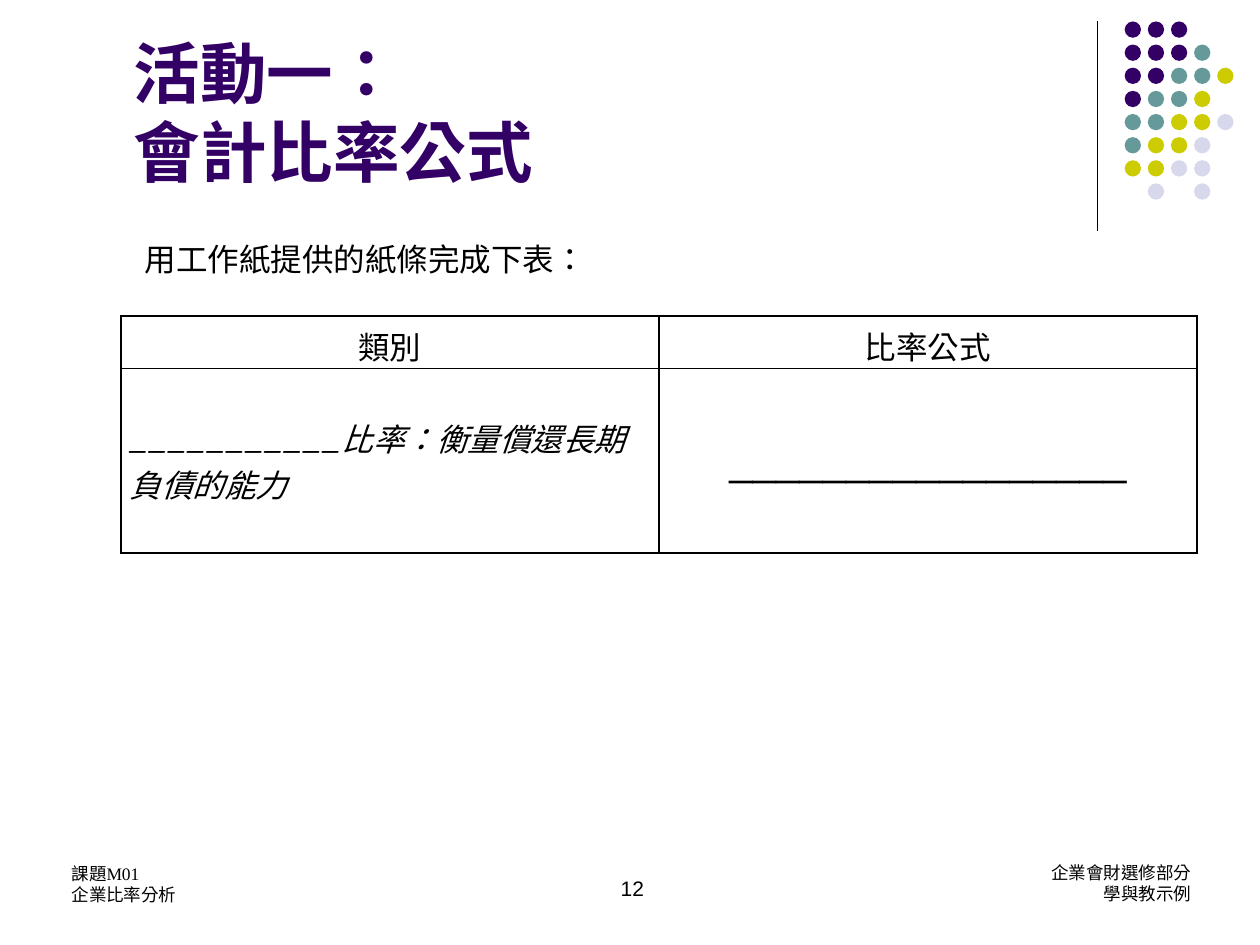
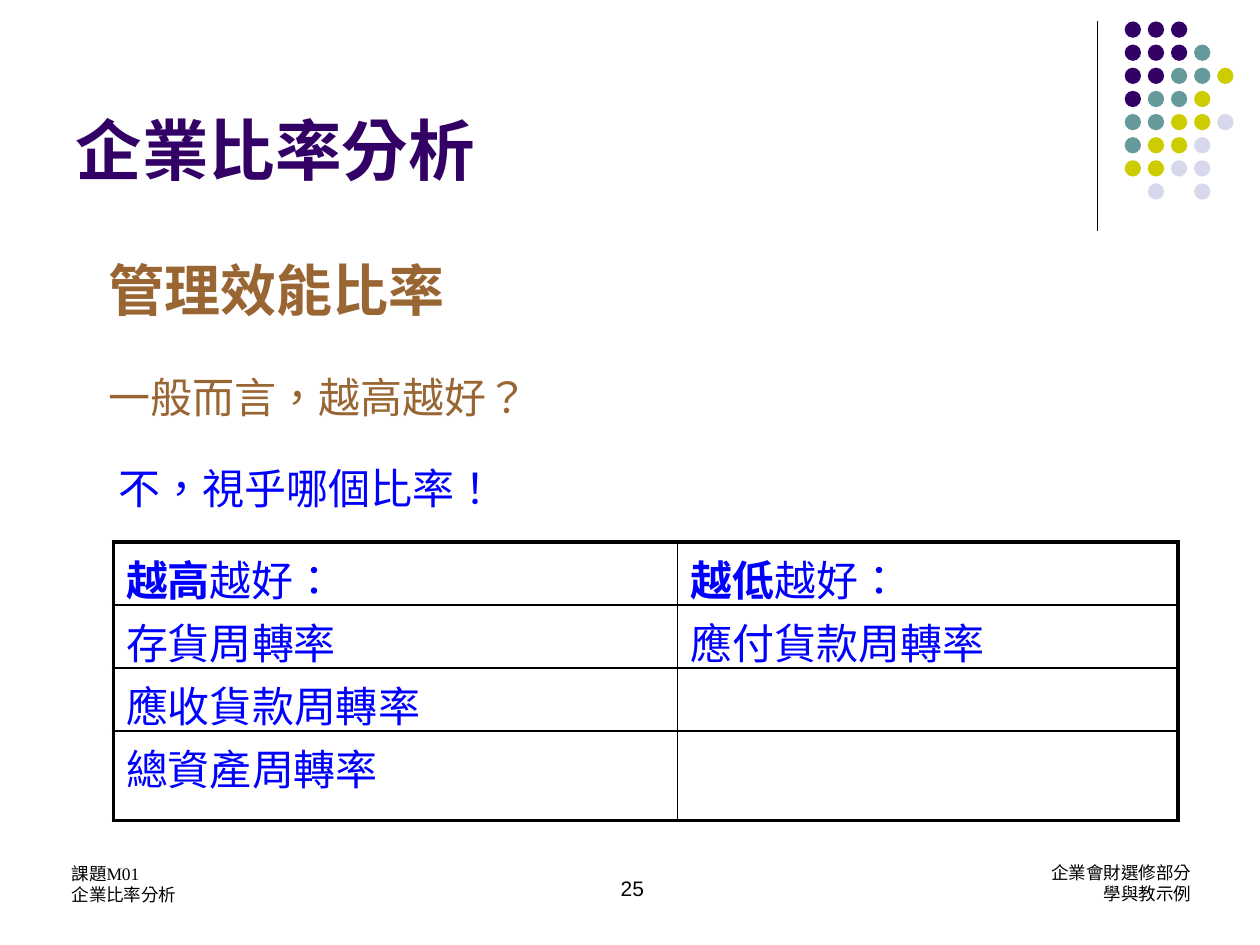
from lxml import etree
from pptx import Presentation
from pptx.dml.color import RGBColor
from pptx.enum.lang import MSO_LANGUAGE_ID
from pptx.enum.shapes import MSO_CONNECTOR, MSO_SHAPE
from pptx.enum.text import MSO_ANCHOR, PP_ALIGN
from pptx.oxml.ns import qn
from pptx.util import Inches, Pt

LEFT, MID, RIGHT, EVEN = PP_ALIGN.LEFT, PP_ALIGN.CENTER, PP_ALIGN.RIGHT, PP_ALIGN.JUSTIFY
TOP, HALF, BASE = MSO_ANCHOR.TOP, MSO_ANCHOR.MIDDLE, MSO_ANCHOR.BOTTOM
OVAL, LINE = MSO_SHAPE.OVAL, MSO_CONNECTOR.STRAIGHT
LANG = MSO_LANGUAGE_ID.TRADITIONAL_CHINESE

WIDE, HIGH = Inches(10), Inches(7.5)
COL, ROW = WIDE / 100, HIGH / 75

BLACK, PURPLE, BROWN, BLUE = "000000", "330066", "996633", "0000FF"
SANS, COMIC, SERIF = "Arial", "Comic Neue", "Times New Roman"
TINTS = {"P": PURPLE, "T": "669999", "Y": "CCCC00", "L": "D8D8EC"}
DOTS = ["PPP", "PPPT", "PPTTY", "PTTY", "TTYYL", "TYYL", "YYLL", " L L"]
THIN, THICK = 1, 2.25


def tint(code):
    return RGBColor.from_string(code)


def place(box):
    x, y, w, h = box
    return round(x * COL), round(y * ROW), round(w * COL), round(h * ROW)


def add_run(par, text, face, size, hue=BLACK, bold=False, slant=False):
    run = par.add_run()
    run.text = text
    font = run.font
    font.name, font.size, font.bold, font.italic = face, Pt(size), bold, slant
    font.color.rgb = tint(hue)
    font.language_id = LANG


def write(frame, lines, align=LEFT, anchor=TOP, gap=0):
    frame.word_wrap = True
    frame.vertical_anchor = anchor
    for i, runs in enumerate(lines):
        par = frame.add_paragraph() if i else frame.paragraphs[0]
        par.alignment = align
        par.space_before = Pt(gap if i else 0)
        for run in runs:
            add_run(par, *run)


def add_text(slide, box, lines, **style):
    frame = slide.shapes.add_textbox(*place(box)).text_frame
    write(frame, lines, **style)
    return frame


def add_title(slide, box, lines, **style):
    title = slide.shapes.title
    title.left, title.top, title.width, title.height = place(box)
    write(title.text_frame, lines, **style)


def add_dots(slide, box):
    x, y, w, h = box
    rule = slide.shapes.add_connector(LINE, *place((x, y, 0, 0))[:2], *place((x, y + h, 0, 0))[:2])
    rule.line.color.rgb = tint(BLACK)
    rule.line.width = Pt(0.75)
    etree.SubElement(rule._element.spPr, qn("a:effectLst"))
    group = slide.shapes.add_group_shape()
    step, size = w * 0.17, w * 0.12
    for r, keys in enumerate(DOTS):
        for c, key in enumerate(keys):
            if key in TINTS:
                spot = (x + w * 0.2 + c * step, y + r * step, size, size)
                dot = group.shapes.add_shape(OVAL, *place(spot))
                dot.shadow.inherit = False
                dot.fill.solid()
                dot.fill.fore_color.rgb = tint(TINTS[key])
                dot.line.fill.background()


def add_foot(slide, box, number):
    x, y, w, h = box
    add_text(slide, (x, y + 1, w * 0.39, h),
             [[("課題M01", SERIF, 10)], [("企業比率分析", SERIF, 10)]])
    page = add_text(slide, (x + w * 0.326, y, w * 0.35, h),
                    [[(str(number), SANS, 12)]], align=MID)
    page.margin_top = round(2.5 * ROW)
    side = add_text(slide, (x + w - 13.2, y + 0.9, 13.2, h),
                    [[("企業會財選修部分", SERIF, 10)], [("學與教示例", SERIF, 10)]], align=RIGHT)
    side.word_wrap = False


def add_edges(cell, widths):
    props = cell._tc.get_or_add_tcPr()
    for i, (side, width) in enumerate(zip("LRTB", widths)):
        edge = etree.Element(qn("a:ln" + side), w=str(Pt(width)))
        fill = etree.SubElement(edge, qn("a:solidFill"))
        etree.SubElement(fill, qn("a:srgbClr"), val=BLACK)
        props.insert(i, edge)


def add_grid(slide, box, cols, rows, cells, rim):
    frame = slide.shapes.add_table(len(rows), len(cols), *place(box))
    table = frame.table
    table.first_row = table.horz_banding = False
    for col, share in zip(table.columns, cols):
        col.width = round(box[2] * share * COL)
    for row, share in zip(table.rows, rows):
        row.height = round(box[3] * share * ROW)
    for r, line in enumerate(cells):
        for c, (runs, align, anchor) in enumerate(line):
            cell = table.cell(r, c)
            cell.fill.background()
            ends = c == 0, c == len(cols) - 1, r == 0, r == len(rows) - 1
            add_edges(cell, [rim if end else THIN for end in ends])
            write(cell.text_frame, [runs], align=align)
            cell.vertical_anchor = anchor
    return table


def add_page(deck, number):
    slide = deck.slides.add_slide(deck.slide_layouts[5])
    add_dots(slide, (87.1, 1.7, 10.8, 16.6))
    add_foot(slide, (4.7, 67, 90.8, 5), number)
    return slide


def add_task(deck):
    slide = add_page(deck, 12)
    add_title(slide, (9.6, 2, 72.8, 12.8), [
        [("活動一：", SANS, 38, PURPLE, True)],
        [("會計比率", COMIC, 38, PURPLE, True), ("公式", SANS, 38, PURPLE, True)],
    ], align=EVEN)
    add_text(slide, (10.5, 18.6, 84.7, 4), [[("用工作紙提供的紙條完成下表：", SANS, 18)]])
    heads = [([(text, SERIF, 18)], MID, TOP) for text in ("類別", "比率公式")]
    blanks = [
        ([("_" * 11 + "比率：衡量償還長期負債的能力", COMIC, 18, BLACK, False, True)], LEFT, HALF),
        ([("_" * 17, SANS, 24)], MID, HALF),
    ]
    table = add_grid(slide, (9.6, 25.1, 85.4, 18.8), (0.5, 0.5), (0.22, 0.78), [heads, blanks], THIN)
    kind = table.cell(1, 0)
    kind.margin_left = kind.margin_right = round(0.7 * COL)
    kind.margin_top = kind.margin_bottom = 0


def add_answer(deck):
    slide = add_page(deck, 25)
    add_title(slide, (5, 1.3, 82.5, 14.2), [[("企業比率分析", SERIF, 38, PURPLE, True)]], anchor=BASE)
    add_text(slide, (7.6, 19.8, 71.9, 14.5), [
        [("管理效能比率", COMIC, 32, BROWN, True)],
        [("一般而言，越高越好？", SANS, 24, BROWN)],
    ], gap=28)
    add_text(slide, (8.4, 36.2, 32, 5.1), [[("不，視乎哪個比率！", SANS, 24, BLUE)]])

    def blue(text, face=SANS, bold=False):
        return text, face, 24, BLUE, bold

    lines = [
        ([blue("越高", bold=True), blue("越好：")], [blue("越低", bold=True), blue("越好：")]),
        ([blue("存貨周轉率", SERIF)], [blue("應付貨款", SERIF), blue("周轉率")]),
        ([blue("應收貨款", SERIF), blue("周轉率")], []),
        ([blue("總資產周轉率", SERIF)], []),
    ]
    cells = [[(runs, LEFT, TOP) for runs in line] for line in lines]
    step = 5 / 22.1
    add_grid(slide, (9, 43, 84.5, 22.1), (0.53, 0.47), (step, step, step, 1 - 3 * step), cells, THICK)


def main():
    deck = Presentation()
    deck.slide_width, deck.slide_height = WIDE, HIGH
    add_task(deck)
    add_answer(deck)
    deck.save("out.pptx")


if __name__ == "__main__":
    main()
